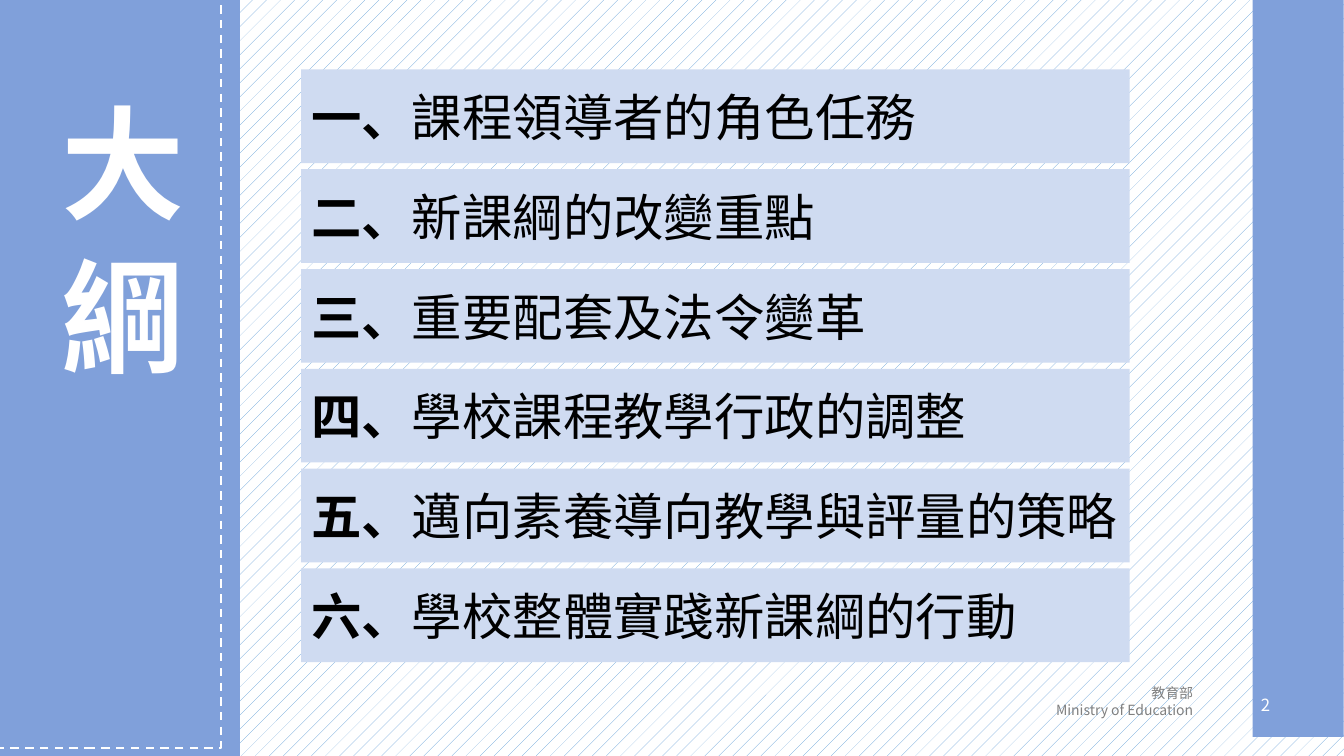
from dataclasses import dataclass

from lxml import etree
from pptx import Presentation
from pptx.dml.color import RGBColor
from pptx.enum import dml, shapes, text
from pptx.oxml import ns
from pptx.util import Cm, Pt

TITLE = "大 綱"
TOPICS = [
    ("一、", "課程領導者的角色任務"),
    ("二、", "新課綱的改變重點"),
    ("三、", "重要配套及法令變革"),
    ("四、", "學校課程教學行政的調整"),
    ("五、", "邁向素養導向教學與評量的策略"),
    ("六、", "學校整體實踐新課綱的行動"),
]
FOOTER = ["教育部", "Ministry of Education"]
PAGE_NUMBER = "2"

LEFT_BAND = (-0.43, -0.05, 6.48, 19.1)
RIGHT_BAND = (31.57, -0.53, 2.29, 19.1)
DASHED_FRAME = (-0.91, -0.86, 6.48, 19.71)
TITLE_BOX = (0.84, 2.44, 4.27, 8.69)
PAGE_BOX = (26.54, 17.37, 5.72, 0.76)
FOOTER_BOX = (26.26, 17.12, 4.06, 1.12)
TOPIC_LEFT, TOPIC_TOP, TOPIC_WIDTH, TOPIC_HEIGHT = 7.59, 1.75, 20.88, 2.36
TOPIC_PITCH = 2.515


@dataclass(frozen=True)
class Theme:
    font: str = "Noto Sans CJK SC"
    band: str = "80A0DA"
    topic: str = "CFDBF1"
    stripe: str = "5B9BD5"
    white: str = "FFFFFF"
    black: str = "000000"
    grey: str = "808080"
    title_size: int = 88
    topic_size: int = 36
    page_size: int = 12
    footer_size: int = 10


THEME = Theme()


def rgb(value):
    return RGBColor.from_string(value)


def add_run(p, content, size, color, bold=False):
    r = p.add_run()
    r.text = content
    r.font.size = Pt(size)
    r.font.bold = bold
    r.font.color.rgb = rgb(color)
    r.font.name = THEME.font
    ea = etree.SubElement(r.font._element, ns.qn("a:ea"))
    ea.set("typeface", THEME.font)


def add_rect(s, box, fill=None):
    sp = s.shapes.add_shape(shapes.MSO_SHAPE.RECTANGLE, *map(Cm, box))
    sp.shadow.inherit = False
    sp.line.fill.background()
    if fill:
        sp.fill.solid()
        sp.fill.fore_color.rgb = rgb(fill)
    else:
        sp.fill.background()
    return sp


def add_label(s, box, lines, size, color, anchor, wrap):
    tf = s.shapes.add_textbox(*map(Cm, box)).text_frame
    tf.word_wrap = wrap
    tf.vertical_anchor = anchor
    for i, line in enumerate(lines):
        p = tf.add_paragraph() if i else tf.paragraphs[0]
        p.alignment = text.PP_ALIGN.RIGHT
        add_run(p, line, size, color)


def set_background(s):
    fill = s.background.fill
    fill.patterned()
    fill.pattern = dml.MSO_PATTERN.PERCENT_5
    fill.fore_color.rgb = rgb(THEME.stripe)
    fill.back_color.rgb = rgb(THEME.white)


def place_title(s, band):
    title = s.shapes.title
    title.left, title.top, title.width, title.height = map(Cm, TITLE_BOX)
    band._element.addnext(title._element)
    tf = title.text_frame
    tf.word_wrap = True
    tf.auto_size = text.MSO_AUTO_SIZE.NONE
    tf.vertical_anchor = text.MSO_ANCHOR.TOP
    tf._txBody.bodyPr.set("vert", "eaVert")
    p = tf.paragraphs[0]
    p.alignment = text.PP_ALIGN.LEFT
    p.line_spacing = 1.0
    add_run(p, TITLE, THEME.title_size, THEME.white, True)


def add_topic(s, index, number, topic):
    top = TOPIC_TOP + index * TOPIC_PITCH
    sp = add_rect(s, (TOPIC_LEFT, top, TOPIC_WIDTH, TOPIC_HEIGHT), THEME.topic)
    tf = sp.text_frame
    tf.word_wrap = True
    tf.vertical_anchor = text.MSO_ANCHOR.MIDDLE
    p = tf.paragraphs[0]
    p.alignment = text.PP_ALIGN.LEFT
    add_run(p, number, THEME.topic_size, THEME.black, True)
    add_run(p, topic, THEME.topic_size, THEME.black)


def main():
    prs = Presentation()
    prs.slide_width, prs.slide_height = Cm(33.87), Cm(19.05)
    s = prs.slides.add_slide(prs.slide_layouts[5])
    set_background(s)

    place_title(s, add_rect(s, LEFT_BAND, THEME.band))
    add_rect(s, RIGHT_BAND, THEME.band)
    frame = add_rect(s, DASHED_FRAME)
    frame.line.color.rgb = rgb(THEME.white)
    frame.line.width = Pt(1.5)
    frame.line.dash_style = dml.MSO_LINE.DASH

    add_label(s, PAGE_BOX, [PAGE_NUMBER], THEME.page_size, THEME.white,
              text.MSO_ANCHOR.MIDDLE, True)
    add_label(s, FOOTER_BOX, FOOTER, THEME.footer_size, THEME.grey,
              text.MSO_ANCHOR.TOP, False)
    for index, (number, topic) in enumerate(TOPICS):
        add_topic(s, index, number, topic)

    prs.save("out.pptx")


if __name__ == "__main__":
    main()
